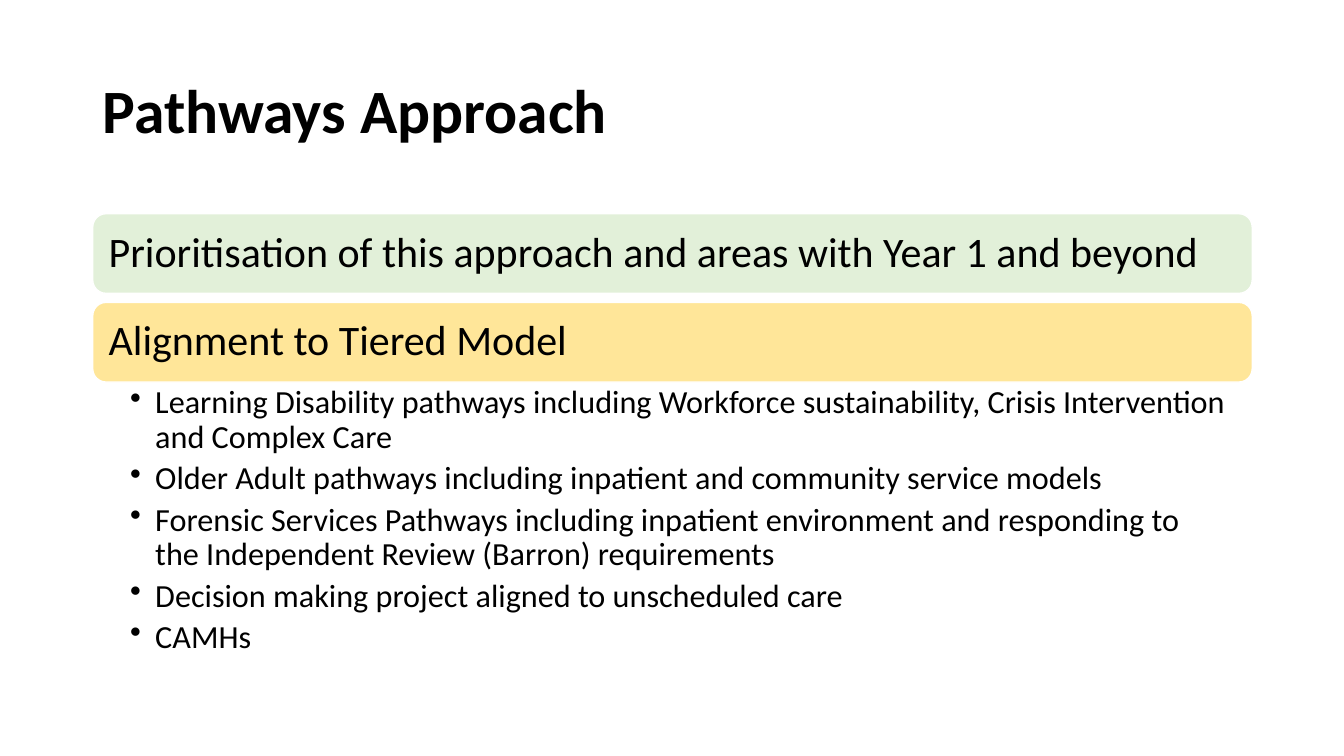
import pptx
import pptx.util
import pptx.dml.color
import pptx.enum.shapes
import pptx.enum.text
import pptx.oxml.ns
import lxml.etree

WIDTH, HEIGHT = 13.33, 7.5
LEFT, CONTENT_WIDTH = 0.92, 11.5
BANNER_TOP, BANNER_HEIGHT, BANNER_PITCH = 2.12, 0.79, 0.88

BANNERS = [
    ("Prioritisation of this approach and areas with Year 1 and beyond", "E2F0D9"),
    ("Alignment to Tiered Model", "FFE699"),
]
PATHWAYS = [
    "Learning Disability pathways including Workforce sustainability, "
    "Crisis Intervention and Complex Care",
    "Older Adult pathways including inpatient and community service models",
    "Forensic Services Pathways including inpatient environment and "
    "responding to the Independent Review (Barron) requirements",
    "Decision making project aligned to unscheduled care",
    "CAMHs",
]


def color(hex_string):
    return pptx.dml.color.RGBColor.from_string(hex_string)


def inches(*lengths):
    return [pptx.util.Inches(length) for length in lengths]


def set_frame(frame, insets, anchor):
    frame.word_wrap = True
    frame.auto_size = pptx.enum.text.MSO_AUTO_SIZE.NONE
    frame.vertical_anchor = anchor
    (frame.margin_left, frame.margin_top,
     frame.margin_right, frame.margin_bottom) = inches(*insets)


def write(para, text, size, bold=False, space_after=0, bullet=False):
    para.alignment = pptx.enum.text.PP_ALIGN.LEFT
    para.line_spacing = 0.9
    para.space_after = pptx.util.Pt(space_after)
    span = para.add_run()
    span.text = text
    span.font.name = "Calibri"
    span.font.size = pptx.util.Pt(size)
    span.font.bold = bold
    span.font.color.rgb = color("000000")
    if bullet:
        properties = para._p.get_or_add_pPr()
        indent = pptx.util.Inches(0.25)
        properties.set("marL", str(indent))
        properties.set("indent", str(-indent))
        mark = lxml.etree.SubElement(properties, pptx.oxml.ns.qn("a:buChar"))
        mark.set("char", "•")


def add_title(page, box, text):
    title = page.shapes.title
    title.left, title.top, title.width, title.height = inches(*box)
    set_frame(title.text_frame, (0.1, 0.05, 0.1, 0.05),
              pptx.enum.text.MSO_ANCHOR.MIDDLE)
    write(title.text_frame.paragraphs[0], text, 44, bold=True)


def add_banner(page, box, text, fill):
    banner = page.shapes.add_shape(
        pptx.enum.shapes.MSO_SHAPE.ROUNDED_RECTANGLE, *inches(*box))
    banner.shadow.inherit = False
    banner.fill.solid()
    banner.fill.fore_color.rgb = color(fill)
    banner.line.color.rgb = color("FFFFFF")
    banner.line.width = pptx.util.Pt(1)
    set_frame(banner.text_frame, (0.12,) * 4, pptx.enum.text.MSO_ANCHOR.MIDDLE)
    write(banner.text_frame.paragraphs[0], text, 30)


def add_bullets(page, box, items):
    frame = page.shapes.add_textbox(*inches(*box)).text_frame
    set_frame(frame, (0.37, 0.04, 0.23, 0.04), pptx.enum.text.MSO_ANCHOR.TOP)
    for index, item in enumerate(items):
        para = frame.add_paragraph() if index else frame.paragraphs[0]
        write(para, item, 23, space_after=4.6, bullet=True)


def main():
    deck = pptx.Presentation()
    deck.slide_width, deck.slide_height = inches(WIDTH, HEIGHT)
    page = deck.slides.add_slide(deck.slide_layouts[5])

    # Heading
    add_title(page, (LEFT, 0.4, CONTENT_WIDTH, 1.45), "Pathways Approach")

    # Banners stacked at an equal pitch
    for row, (text, fill) in enumerate(BANNERS):
        top = BANNER_TOP + row * BANNER_PITCH
        add_banner(page, (LEFT, top, CONTENT_WIDTH, BANNER_HEIGHT), text, fill)

    # Pathways listed directly below the last banner
    add_bullets(page, (LEFT, top + BANNER_HEIGHT, CONTENT_WIDTH, 2.85), PATHWAYS)

    deck.save("out.pptx")


if __name__ == "__main__":
    main()
